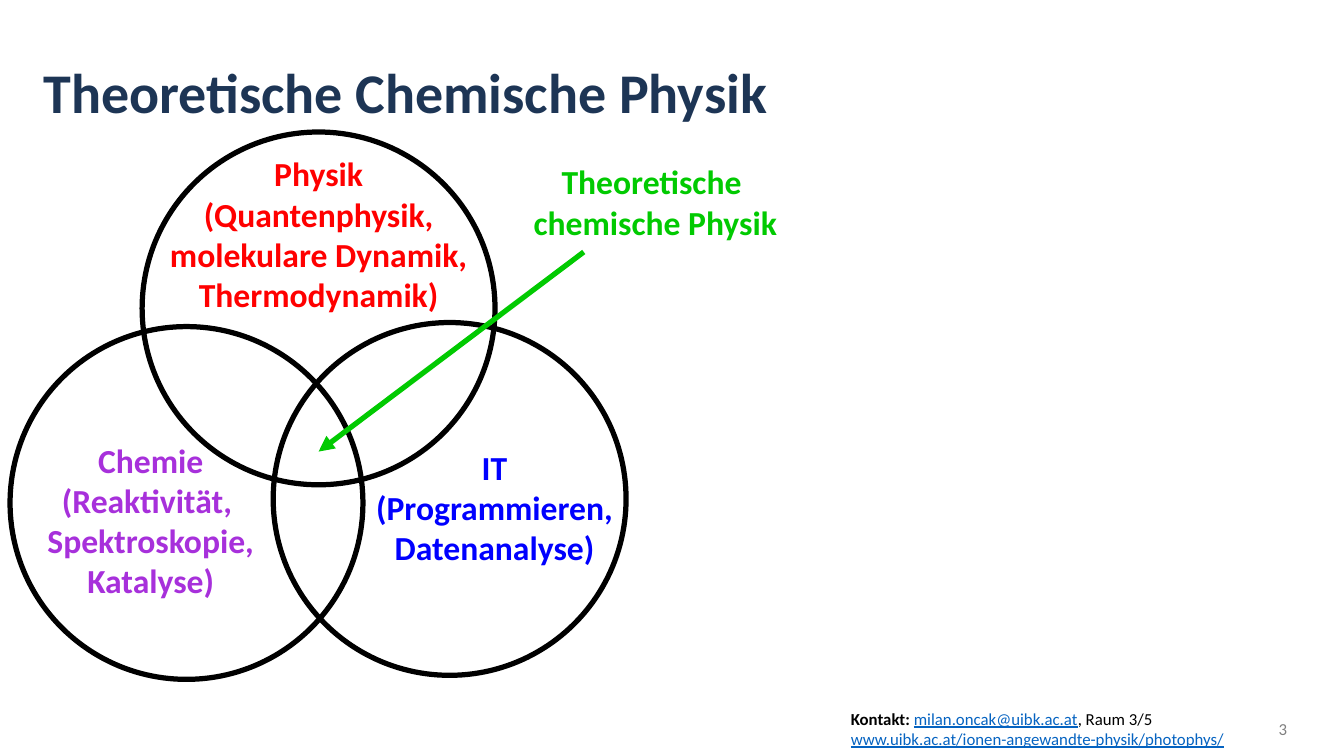
from lxml.etree import SubElement
from pptx import Presentation
from pptx.dml.color import RGBColor
from pptx.enum.shapes import MSO_CONNECTOR as Conn, MSO_SHAPE as Shape
from pptx.enum.text import MSO_ANCHOR as Anchor, PP_ALIGN as Align
from pptx.oxml.ns import qn
from pptx.util import Inches, Pt

NAVY = RGBColor(0x1D, 0x35, 0x55)
GRAY = RGBColor(0x80, 0x80, 0x80)
BLACK = RGBColor(0, 0, 0)
RED = RGBColor(0xFF, 0, 0)
BLUE = RGBColor(0, 0, 0xFF)
PURPLE = RGBColor(0xA7, 0x30, 0xDB)
GREEN = RGBColor(0x01, 0xCA, 0x01)
LINK = RGBColor(0x05, 0x63, 0xC1)
FONT = "Calibri"
SIZE = 3.5
STROKE = Pt(3.75)

CIRCLES = [(1.41, 1.31), (0.1, 3.24), (2.71, 3.2)]
LABELS = [
    ((3.62, 4.38, 2.57, 1.31), BLUE,
     ["IT", "(Programmieren,", "Datenanalyse)"]),
    ((0.36, 4.31, 2.27, 1.72), PURPLE,
     ["Chemie", "(Reaktivität, ", "Spektroskopie,", "Katalyse)"]),
    ((1.57, 1.47, 3.18, 1.72), RED,
     ["Physik", "(Quantenphysik,", "molekulare Dynamik,", "Thermodynamik)"]),
    ((5.18, 1.55, 2.64, 0.91), GREEN,
     ["Theoretische ", "chemische Physik"]),
]


def set_font(font, size, color, bold=False):
    font.name = FONT
    font.size = Pt(size)
    font.bold = bold
    font.color.rgb = color


def add_title(slide, text):
    title = slide.shapes.title
    title.left, title.top = Inches(0.33), Inches(0.41)
    title.width, title.height = Inches(12.08), Inches(1.08)
    frame = title.text_frame
    frame.text = text
    frame.vertical_anchor = Anchor.MIDDLE
    para = frame.paragraphs[0]
    para.alignment = Align.LEFT
    para.line_spacing = 0.9
    set_font(para.font, 40, NAVY, True)


def add_circle(slide, left, top):
    circle = slide.shapes.add_shape(
        Shape.OVAL, Inches(left), Inches(top), Inches(SIZE), Inches(SIZE))
    circle.shadow.inherit = False
    circle.fill.background()
    circle.line.color.rgb = BLACK
    circle.line.width = STROKE


def add_text(slide, box, lines, size, color, bold=False, align=Align.CENTER):
    frame = slide.shapes.add_textbox(*map(Inches, box)).text_frame
    frame.word_wrap = False
    frame.text = "\n".join(lines)
    for para in frame.paragraphs:
        para.alignment = align
        set_font(para.font, size, color, bold)
    return frame


def add_arrow(slide, start, end):
    arrow = slide.shapes.add_connector(
        Conn.STRAIGHT, *map(Inches, start + end))
    arrow.line.color.rgb = GREEN
    arrow.line.width = STROKE
    props = arrow.line._get_or_add_ln()
    SubElement(props, qn("a:tailEnd"), type="triangle")
    SubElement(arrow._element.spPr, qn("a:effectLst"))


def add_contact(slide):
    lines = ["", "www.uibk.ac.at/ionen-angewandte-physik/photophys/"]
    frame = add_text(slide, (8.34, 6.98, 3.94, 0.5), lines, 12, BLACK,
                     align=Align.LEFT)
    first, web = frame.paragraphs
    parts = ["Kontakt: ", "milan.oncak@uibk.ac.at", ", Raum 3/5"]
    for part in parts:
        first.add_run().text = part
    head, mail, _ = first.runs
    head.font.bold = True
    for link in (mail, web.runs[0]):
        link.font.color.rgb = LINK
        link.font.underline = True


def main():
    prs = Presentation()
    prs.slide_width, prs.slide_height = Inches(13.33), Inches(7.5)
    slide = prs.slides.add_slide(prs.slide_layouts[5])
    add_title(slide, "Theoretische Chemische Physik")
    number = add_text(slide, (12.42, 7.03, 0.61, 0.4), ["3"], 12, GRAY)
    number.vertical_anchor = Anchor.MIDDLE
    for left, top in CIRCLES:
        add_circle(slide, left, top)
    for box, color, lines in LABELS:
        add_text(slide, box, lines, 24, color, True)
    add_arrow(slide, (5.79, 2.5), (3.16, 4.48))
    add_contact(slide)
    prs.save("out.pptx")


if __name__ == "__main__":
    main()
